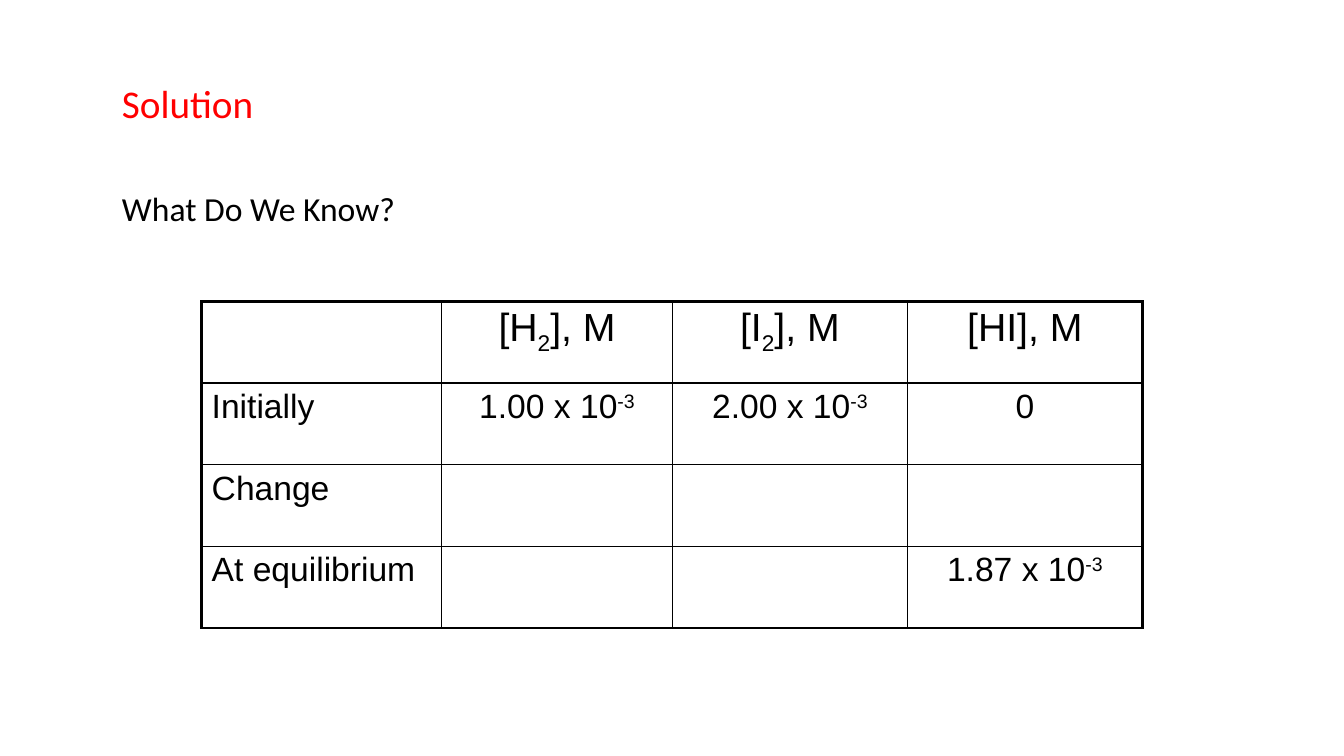
"""Build the equilibrium table slide with its title."""
from typing import NamedTuple

from lxml.etree import SubElement
from pptx import Presentation
from pptx.dml.color import RGBColor
from pptx.enum.text import MSO_ANCHOR, MSO_AUTO_SIZE, PP_ALIGN
from pptx.oxml.ns import qn
from pptx.slide import Slide
from pptx.table import Table, _Cell
from pptx.text.text import _Paragraph
from pptx.util import Inches, Pt

COLORS = {"title": "FF0000", "text": "000000", "border": "000000"}
SLIDE_WIDTH, SLIDE_HEIGHT = Inches(13.33), Inches(7.5)
TABLE_LEFT, TABLE_TOP = Inches(2), Inches(2.99)
COLUMN_WIDTHS = [Inches(width) for width in (2.38, 2.29, 2.33, 2.33)]
ROW_HEIGHT = Inches(0.81)
OUTER_BORDER, INNER_BORDER = Pt(2.25), Pt(1)
SUBSCRIPT, SUPERSCRIPT = -25000, 30000


class Span(NamedTuple):
    text: str
    baseline: int = 0


class TitleLine(NamedTuple):
    text: str
    size: int
    color: str
    space_before: int


def concentration(species: str, count: str = "") -> list[Span]:
    if not count:
        return [Span(f"[{species}], M")]
    return [Span(f"[{species}"), Span(count, SUBSCRIPT), Span("], M")]


def power_of_ten(factor: str, exponent: str) -> list[Span]:
    return [Span(f"{factor} x 10"), Span(exponent, SUPERSCRIPT)]


TITLE_LINES = [
    TitleLine("Solution", 28, "title", 0),
    TitleLine("What Do We Know?", 24, "text", 44),
]
TABLE_ROWS: list[list[list[Span]]] = [
    [[], concentration("H", "2"), concentration("I", "2"), concentration("HI")],
    [[Span("Initially")], power_of_ten("1.00", "-3"), power_of_ten("2.00", "-3"), [Span("0")]],
    [[Span("Change")], [], [], []],
    [[Span("At equilibrium")], [], [], power_of_ten("1.87", "-3")],
]


def format_font(paragraph: _Paragraph, name: str, size: int, color: str) -> None:
    paragraph.font.name = name
    paragraph.font.size = Pt(size)
    paragraph.font.color.rgb = RGBColor.from_string(COLORS[color])


def add_title(slide: Slide) -> None:
    title = slide.shapes.title
    title.left, title.top = Inches(1.11), Inches(0.74)
    title.width, title.height = Inches(10), Inches(1.66)
    frame = title.text_frame
    frame.word_wrap = True
    frame.auto_size = MSO_AUTO_SIZE.NONE
    frame.vertical_anchor = MSO_ANCHOR.TOP
    frame.text = "\n".join(line.text for line in TITLE_LINES)
    for paragraph, line in zip(frame.paragraphs, TITLE_LINES):
        paragraph.alignment = PP_ALIGN.LEFT
        paragraph.space_before = Pt(line.space_before)
        format_font(paragraph, "Calibri", line.size, line.color)


def fill_cell(cell: _Cell, spans: list[Span], size: int, alignment: PP_ALIGN) -> None:
    paragraph = cell.text_frame.paragraphs[0]
    paragraph.alignment = alignment
    format_font(paragraph, "Arial", size, "text")
    for span in spans:
        run = paragraph.add_run()
        run.text = span.text
        if span.baseline:
            run._r.get_or_add_rPr().set("baseline", str(span.baseline))


def draw_borders(cell: _Cell, outer_edges: dict[str, bool]) -> None:
    properties = cell._tc.get_or_add_tcPr()
    for position, (side, is_outer) in enumerate(outer_edges.items()):
        width = OUTER_BORDER if is_outer else INNER_BORDER
        line = SubElement(properties, qn(f"a:ln{side}"), w=str(width))
        fill = SubElement(line, qn("a:solidFill"))
        SubElement(fill, qn("a:srgbClr"), val=COLORS["border"])
        properties.insert(position, line)


def add_equilibrium_table(slide: Slide) -> None:
    row_count, column_count = len(TABLE_ROWS), len(COLUMN_WIDTHS)
    table: Table = slide.shapes.add_table(
        row_count, column_count, TABLE_LEFT, TABLE_TOP,
        sum(COLUMN_WIDTHS), row_count * ROW_HEIGHT,
    ).table
    table.first_row = table.horz_banding = False
    for column, width in zip(table.columns, COLUMN_WIDTHS):
        column.width = width
    for row_index, row in enumerate(TABLE_ROWS):
        for column_index, spans in enumerate(row):
            cell = table.cell(row_index, column_index)
            cell.fill.background()
            size = 28 if row_index == 0 else 24
            alignment = PP_ALIGN.LEFT if column_index == 0 else PP_ALIGN.CENTER
            fill_cell(cell, spans, size, alignment)
            draw_borders(cell, {
                "L": column_index == 0,
                "R": column_index == column_count - 1,
                "T": row_index == 0,
                "B": row_index == row_count - 1,
            })


def main() -> None:
    presentation = Presentation()
    presentation.slide_width, presentation.slide_height = SLIDE_WIDTH, SLIDE_HEIGHT
    slide = presentation.slides.add_slide(presentation.slide_layouts.get_by_name("Title Only"))
    add_title(slide)
    add_equilibrium_table(slide)
    presentation.save("out.pptx")


if __name__ == "__main__":
    main()
